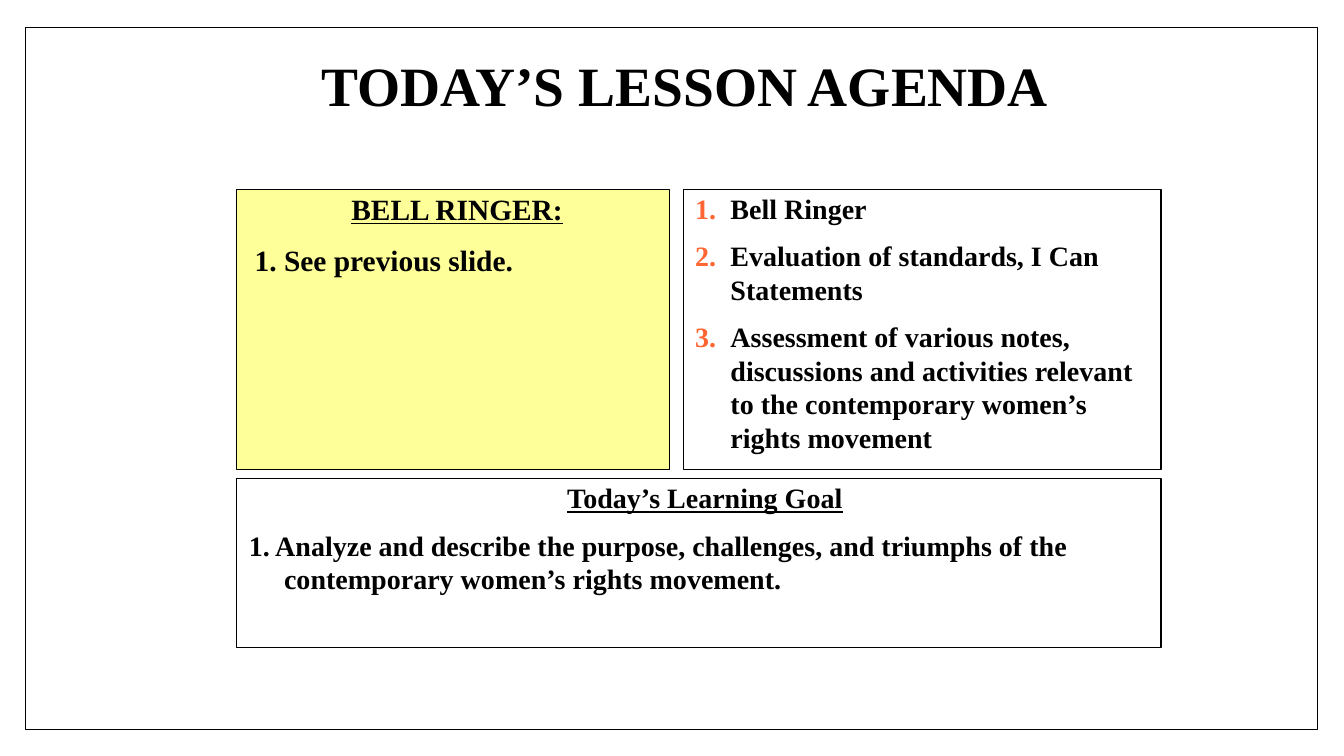
from lxml import etree
from pptx import Presentation
from pptx import util as u
from pptx.dml.color import RGBColor
from pptx.enum import shapes, text
from pptx.oxml.ns import qn

FONT = "Times New Roman"
BLACK, WHITE, YELLOW, ORANGE = "000000", "FFFFFF", "FFFF99", "FF6633"
LEFT, TOP, RIGHT = 5.97, 4.78, 29.26  # edges of the panel block, cm
HIGH = 7.06


def tint(target, color):
    target.rgb = RGBColor.from_string(color)


def add_box(slide, x, y, w, h, fill=None, line=0.75):
    box = slide.shapes.add_shape(
        shapes.MSO_SHAPE.RECTANGLE, u.Cm(x), u.Cm(y), u.Cm(w), u.Cm(h))
    box.shadow.inherit = False
    if fill:
        box.fill.solid()
        tint(box.fill.fore_color, fill)
    else:
        box.fill.background()
    tint(box.line.color, BLACK)
    box.line.width = u.Pt(line)
    return box


def set_frame(shape, side, top, base, anchor=text.MSO_ANCHOR.TOP):
    frame = shape.text_frame
    frame.word_wrap = True
    frame.vertical_anchor = anchor
    frame.margin_left = frame.margin_right = u.Cm(side)
    frame.margin_top, frame.margin_bottom = u.Cm(top), u.Cm(base)
    return frame


def write(frame, lines, size, left=0, hang=0, before=0, after=0, pitch=1.0):
    frame.text = "\n".join(lines)
    for para in frame.paragraphs:
        para.alignment = text.PP_ALIGN.LEFT
        para.line_spacing = pitch
        para.space_before, para.space_after = u.Pt(before), u.Pt(after)
        props = para._p.get_or_add_pPr()
        props.set("marL", str(u.Cm(left)))
        props.set("indent", str(u.Cm(-hang)))
        for run in para.runs:
            run.font.name, run.font.size = FONT, u.Pt(size)
            run.font.bold = True
            tint(run.font.color, BLACK)


def head(para):
    para.alignment = text.PP_ALIGN.CENTER
    para.runs[0].font.underline = True


def number(para, color):
    props = para._p.get_or_add_pPr()
    shade = etree.SubElement(props, qn("a:buClr"))
    etree.SubElement(shade, qn("a:srgbClr"), val=color)
    etree.SubElement(props, qn("a:buAutoNum"), type="arabicPeriod")


def main():
    prs = Presentation()
    prs.slide_width, prs.slide_height = u.Cm(33.87), u.Cm(19.05)
    slide = prs.slides.add_slide(prs.slide_layouts[6])

    # Page border
    add_box(slide, 0.64, 0.69, 32.56, 17.7, WHITE, 1)

    # Title
    title = slide.shapes.add_textbox(
        u.Cm(7.92), u.Cm(1.45), u.Cm(20.27), u.Cm(1.6))
    frame = set_frame(title, 0.18, 0.08, 0.1, text.MSO_ANCHOR.MIDDLE)
    write(frame, ["TODAY’S LESSON AGENDA"], 39.6, pitch=0.9)

    # Bell ringer
    bell = add_box(slide, LEFT, TOP, 10.9, HIGH, YELLOW)
    frame = set_frame(bell, 0.25, 0.13, 0.13)
    write(frame, ["BELL RINGER:", "1. See previous slide."], 21,
          0.81, 0.61, before=14, pitch=0.9)
    head(frame.paragraphs[0])

    # Agenda
    width = 12.04
    agenda = add_box(slide, RIGHT - width, TOP, width, HIGH)
    frame = set_frame(agenda, 0, 0.05, 0)
    write(frame, [
        "Bell Ringer",
        "Evaluation of standards, I Can Statements",
        "Assessment of various notes, discussions and activities relevant "
        "to the contemporary women’s rights movement",
    ], 20, 1.19, 0.89, after=9.7)
    for para in frame.paragraphs:
        number(para, ORANGE)

    # Learning goal
    goal = add_box(slide, LEFT, 12.07, RIGHT - LEFT, 4.24)
    frame = set_frame(goal, 0, 0.05, 0)
    write(frame, [
        "Today’s Learning Goal",
        "1. Analyze and describe the purpose, challenges, and triumphs of the "
        "contemporary women’s rights movement.",
    ], 20, 1.19, 0.89, after=9.8)
    head(frame.paragraphs[0])

    prs.save("out.pptx")


if __name__ == "__main__":
    main()
